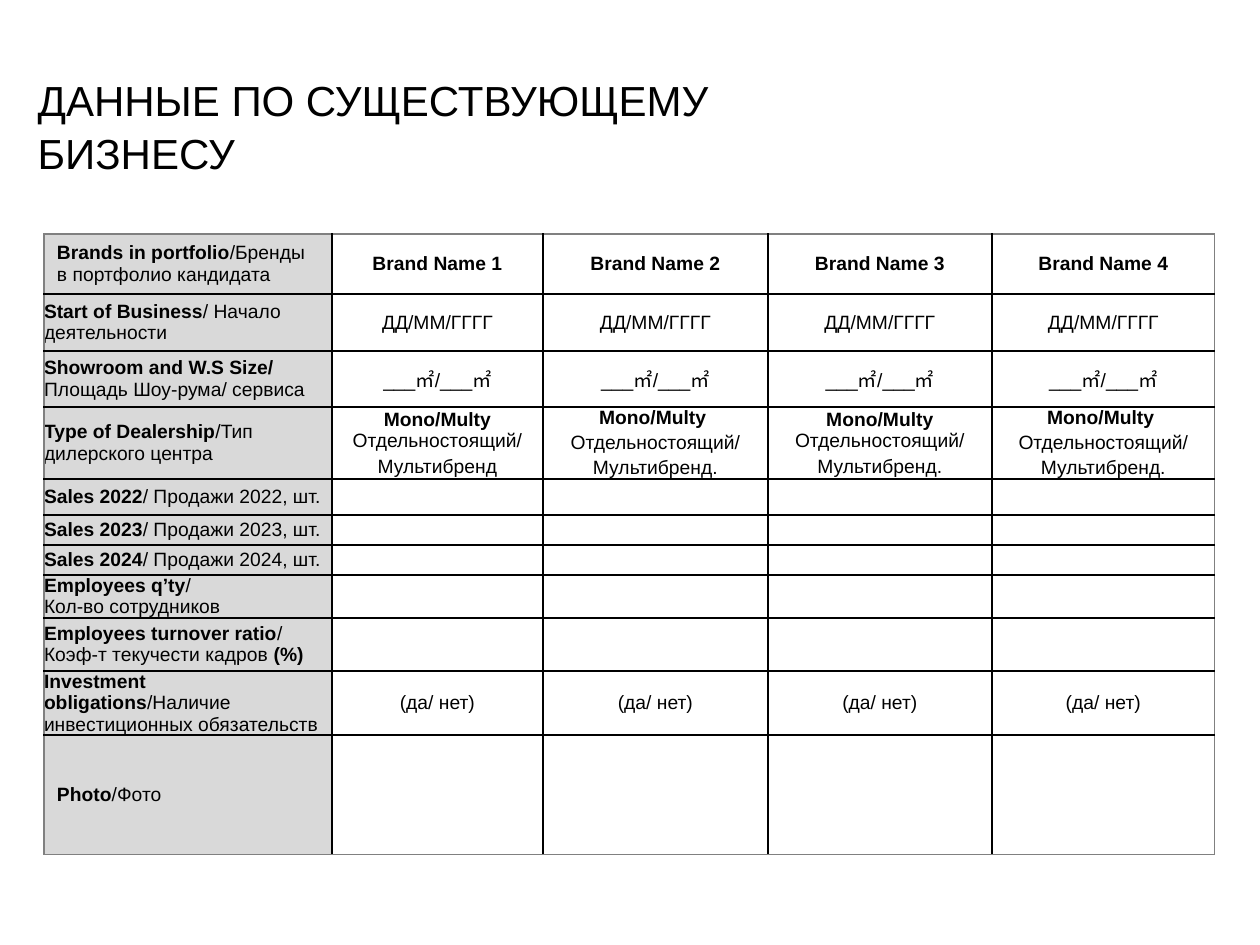
from lxml import etree
from pptx import Presentation
from pptx import util as u
from pptx.dml.color import RGBColor
from pptx.enum import text
from pptx.oxml import ns

BLACK, GREY, LABEL, WHITE = "000000", "808080", "D9D9D9", "FFFFFF"
COLUMNS = [288, 211, 225, 224, 223]
HEIGHTS = [60, 57, 56, 72, 36, 30, 30, 43, 53, 64, 119]


def px(length):
    return u.Emu(length * 914400 // 126)


def color(value):
    return RGBColor.from_string(value)


def bold(words):
    return (words, True)


def plain(words):
    return (words, False)


class Deck:
    """Holds the style and the current slide."""

    font = "Arial"
    title_size = 24
    cell_size = 11
    gap = 2.2

    def __init__(self):
        self.deck = Presentation()
        self.deck.slide_width, self.deck.slide_height = px(1260), px(945)
        self.page = self.deck.slides.add_slide(self.deck.slide_layouts[5])

    def span(self, para, words, size, strong=False):
        span = para.add_run()
        span.text = words
        span.font.name = self.font
        span.font.size = u.Pt(size)
        span.font.bold = strong
        span.font.color.rgb = color(BLACK)

    def title(self, words, left, top, width, height):
        box = self.page.shapes.title
        box.left, box.top, box.width, box.height = map(px, (left, top, width, height))
        frame = box.text_frame
        frame.word_wrap = True
        frame.auto_size = text.MSO_AUTO_SIZE.NONE
        frame.vertical_anchor = text.MSO_ANCHOR.TOP
        para = frame.paragraphs[0]
        para.alignment = text.PP_ALIGN.LEFT
        para.line_spacing = 1.05
        self.span(para, words, self.title_size)

    def table(self, rows, left, top):
        frame = self.page.shapes.add_table(
            len(rows), len(COLUMNS), px(left), px(top), px(sum(COLUMNS)), px(sum(HEIGHTS)))
        table = frame.table
        table.first_row = table.horz_banding = False
        for column, width in zip(table.columns, COLUMNS):
            column.width = px(width)
        for row, height in zip(table.rows, HEIGHTS):
            row.height = px(height)
        last_row, last_column = len(rows) - 1, len(COLUMNS) - 1
        for i, row in enumerate(rows):
            for j, paragraphs in enumerate(row):
                cell = table.cell(i, j)
                outer = {"lnL": j == 0, "lnR": j == last_column,
                         "lnT": i == 0, "lnB": i == last_row}
                self.borders(cell, outer)
                cell.fill.solid()
                cell.fill.fore_color.rgb = color(WHITE if j else LABEL)
                inset = 13 if j or i in (0, last_row) else 0
                cell.margin_left = cell.margin_right = px(inset)
                cell.margin_top = cell.margin_bottom = px(0 if i else 5)
                cell.vertical_anchor = text.MSO_ANCHOR.MIDDLE
                self.cell_text(cell, paragraphs, centred=j > 0)

    def borders(self, cell, outer):
        properties = cell._tc.get_or_add_tcPr()
        for side, is_outer in outer.items():
            width = u.Pt(0.75 if is_outer else 1)
            line = etree.SubElement(properties, ns.qn(f"a:{side}"), w=str(width))
            fill = etree.SubElement(line, ns.qn("a:solidFill"))
            etree.SubElement(fill, ns.qn("a:srgbClr"), val=GREY if is_outer else BLACK)

    def cell_text(self, cell, paragraphs, centred):
        frame = cell.text_frame
        if not paragraphs:
            etree.SubElement(frame.paragraphs[0]._p, ns.qn("a:endParaRPr"),
                             sz=str(self.cell_size * 100))
        for k, spans in enumerate(paragraphs):
            para = frame.add_paragraph() if k else frame.paragraphs[0]
            para.alignment = text.PP_ALIGN.CENTER if centred else text.PP_ALIGN.LEFT
            if k and centred:
                para.space_before = u.Pt(self.gap)
            for words, strong in spans:
                self.span(para, words, self.cell_size, strong)

    def save(self):
        self.deck.save("out.pptx")


def same(words):
    return [[[plain(words)]]] * 4


def sales(year):
    return [[[bold(f"Sales {year}"), plain(f"/ Продажи {year}, шт.")]]] + empty


empty = [[]] * 4
brands = [[[bold(f"Brand Name {number}")]] for number in range(1, 5)]
mono, separate = bold("Mono/Multy "), plain("Отдельностоящий/")
multi = [plain("Мультибренд.")]
joined, split = [[mono, separate], multi], [[mono], [separate], multi]
dealership = [[[mono, separate], [plain("Мультибренд")]], split, joined, split]

ROWS = [
    [[[bold("Brands in portfolio"), plain("/Бренды в портфолио кандидата")]]] + brands,
    [[[bold("Start of Business"), plain("/ Начало деятельности")]]] + same("ДД/ММ/ГГГГ"),
    [[[bold("Showroom and W.S Size/ "), plain("Площадь Шоу-рума/ сервиса")]]]
    + same("___㎡/___㎡"),
    [[[bold("Type of Dealership"), plain("/Тип дилерского центра")]]] + dealership,
    *map(sales, (2022, 2023, 2024)),
    [[[bold("Employees q’ty"), plain("/")], [plain("Кол-во сотрудников")]]] + empty,
    [[[bold("Employees turnover ratio"), plain("/ Коэф-т текучести кадров "),
       bold("(%)")]]] + empty,
    [[[bold("Investment obligations"), plain("/Наличие инвестиционных обязательств")]]]
    + same("(да/ нет)"),
    [[[bold("Photo"), plain("/Фото")]]] + empty,
]


def main():
    deck = Deck()
    deck.title("ДАННЫЕ ПО СУЩЕСТВУЮЩЕМУ БИЗНЕСУ", 25, 66, 854, 68)
    deck.table(ROWS, 44, 234)
    deck.save()


if __name__ == "__main__":
    main()
